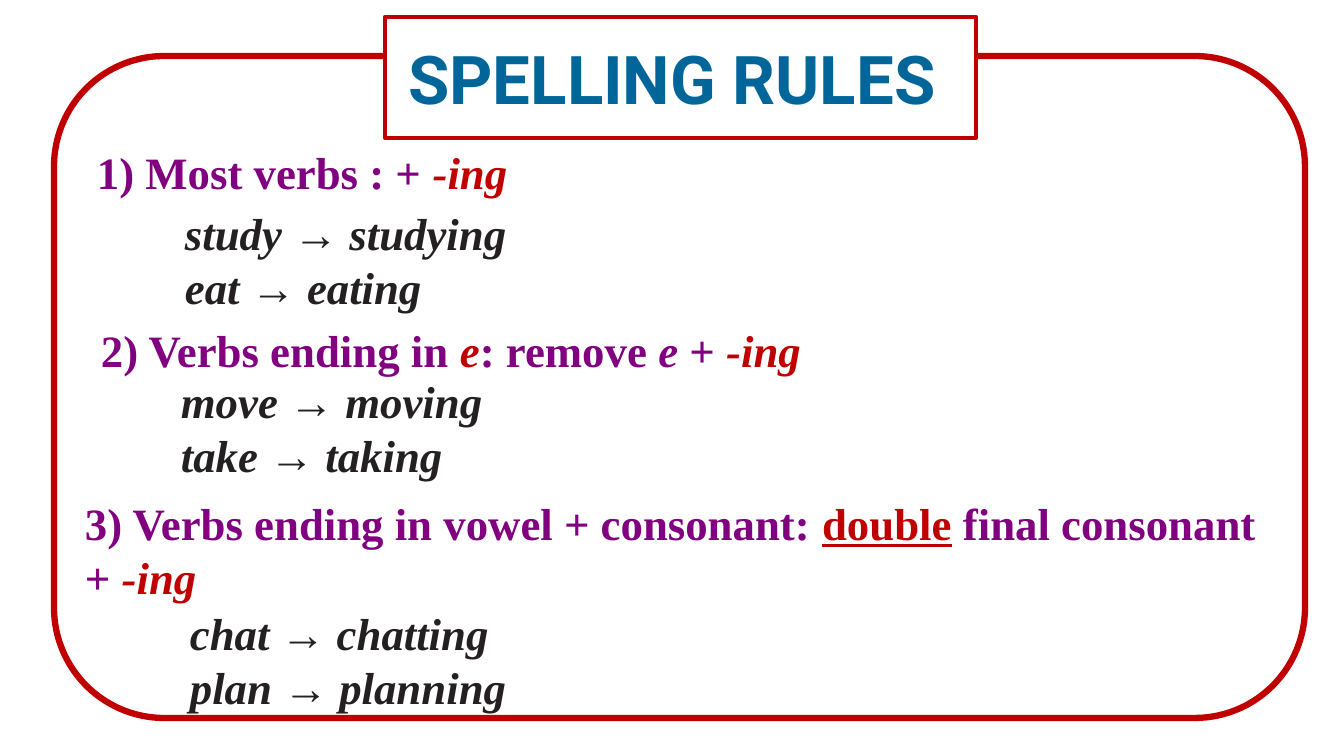
from lxml import etree
from pptx import Presentation
from pptx.dml.color import RGBColor
from pptx.enum.shapes import MSO_SHAPE
from pptx.enum.text import MSO_ANCHOR, MSO_AUTO_SIZE, PP_ALIGN
from pptx.oxml.ns import qn
from pptx.util import Emu, Pt

ROUNDED = MSO_SHAPE.ROUNDED_RECTANGLE
MIDDLE, CENTER = MSO_ANCHOR.MIDDLE, PP_ALIGN.CENTER
NO_FIT, GROW = MSO_AUTO_SIZE.NONE, MSO_AUTO_SIZE.SHAPE_TO_FIT_TEXT

EMU_PER_PX = 914400 / 100.8
TITLE_ONLY = 5
COLORS = {"red": "C00000", "blue": "006699", "purple": "800080",
          "ink": "242021", "white": "FFFFFF"}

# Run styles: colour, italic, underline
STYLES = {
    "rule": ("purple", False, False),
    "rule_italic": ("purple", True, False),
    "key": ("red", True, False),
    "key_underlined": ("red", False, True),
    "example": ("ink", True, False),
    "arrow": ("ink", False, False),
}


def px(*lengths):
    return [Emu(round(n * EMU_PER_PX)) for n in lengths]


def rgb(name):
    return RGBColor.from_string(COLORS[name])


def set_line(sp, color, width):
    sp.line.color.rgb = rgb(color)
    sp.line.width = Pt(width)


def set_font(p, name, size):
    p.font.name = name
    p.font.size = Pt(size)
    p.font.bold = True


def add_frame(slide, box):
    sp = slide.shapes.add_shape(ROUNDED, *px(*box))
    sp.shadow.inherit = False
    sp.fill.background()
    set_line(sp, "red", 4.5)


def outline_text(r, color, width):
    ln = etree.Element(qn("a:ln"), w=str(Pt(width)))
    fill = etree.SubElement(ln, qn("a:solidFill"))
    etree.SubElement(fill, qn("a:srgbClr"), val=COLORS[color])
    r.font._element.insert(0, ln)


def format_title(slide, text, box):
    sp = slide.shapes.title
    sp.left, sp.top, sp.width, sp.height = px(*box)
    # Rounded outline, in front of the frame
    geom = etree.Element(qn("a:prstGeom"), prst="roundRect")
    etree.SubElement(geom, qn("a:avLst"))
    sp._element.spPr.insert(1, geom)
    slide.shapes._spTree.append(sp._element)
    sp.fill.solid()
    sp.fill.fore_color.rgb = rgb("white")
    set_line(sp, "red", 3)

    tf = sp.text_frame
    tf.auto_size = NO_FIT
    tf.vertical_anchor = MIDDLE
    p = tf.paragraphs[0]
    p.alignment = CENTER
    set_font(p, "Roboto", 48)
    r = p.add_run()
    r.text = text
    r.font.color.rgb = rgb("blue")
    outline_text(r, "white", 0.75)


def add_text(slide, box, lines):
    tf = slide.shapes.add_textbox(*px(*box)).text_frame
    tf.word_wrap = True
    tf.auto_size = GROW
    for i, runs in enumerate(lines):
        p = tf.add_paragraph() if i else tf.paragraphs[0]
        set_font(p, "Times New Roman", 32)
        for text, style in runs:
            color, italic, underline = STYLES[style]
            r = p.add_run()
            r.text = text
            r.font.color.rgb = rgb(color)
            r.font.italic = italic
            r.font.underline = underline


def add_examples(slide, box, pairs, arrow="arrow"):
    add_text(slide, box, [
        [(f"{verb} ", "example"), ("→ ", arrow), (ing_form, "example")]
        for verb, ing_form in pairs])


def main():
    prs = Presentation()
    prs.slide_width, prs.slide_height = px(1344, 756)
    slide = prs.slides.add_slide(prs.slide_layouts[TITLE_ONLY])

    # Frame and title
    add_frame(slide, (54, 56, 1251, 662))
    format_title(slide, "SPELLING RULES ", (385, 17, 591, 121))

    # Rule 1
    add_text(slide, (87, 140, 757, 65),
             [[("1) Most verbs : + ", "rule"), ("-ing", "key")]])
    add_examples(slide, (175, 201, 475, 119),
                 [("study", "studying"), ("eat", "eating")])

    # Rule 2
    add_text(slide, (91, 318, 834, 65),
             [[("2) Verbs ending in ", "rule"), ("e", "key"),
               (": remove ", "rule"), ("e ", "rule_italic"),
               ("+ ", "rule"), ("-ing", "key")]])
    add_examples(slide, (171, 369, 671, 119),
                 [("move", "moving"), ("take", "taking")])

    # Rule 3
    add_text(slide, (75, 491, 1203, 119),
             [[("3) Verbs ending in vowel + consonant: ", "rule"),
               ("double", "key_underlined"),
               (" final consonant + ", "rule"), ("-ing", "key")]])
    add_examples(slide, (180, 601, 889, 119),
                 [("chat", "chatting"), ("plan", "planning")], arrow="example")

    prs.save("out.pptx")


main()
